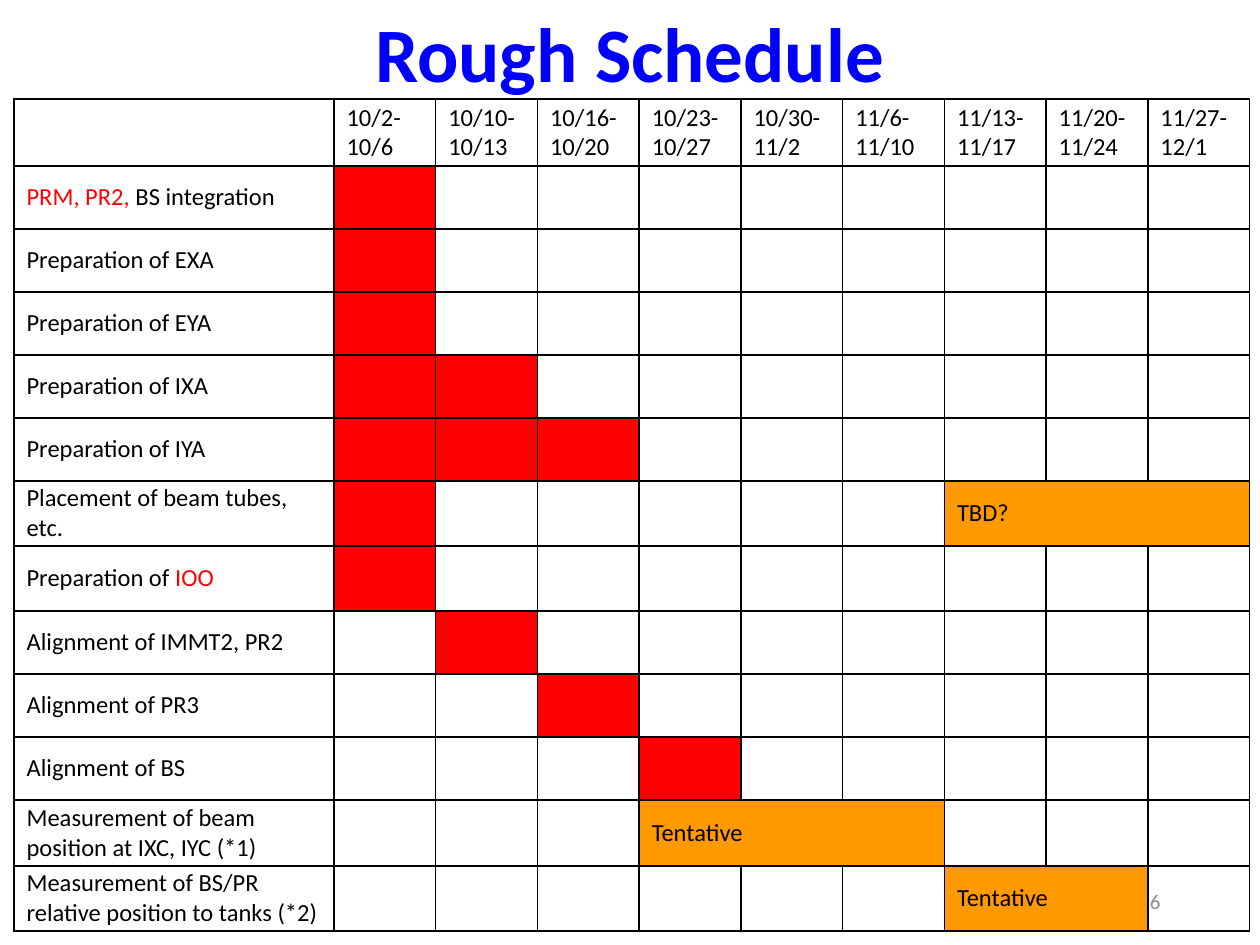
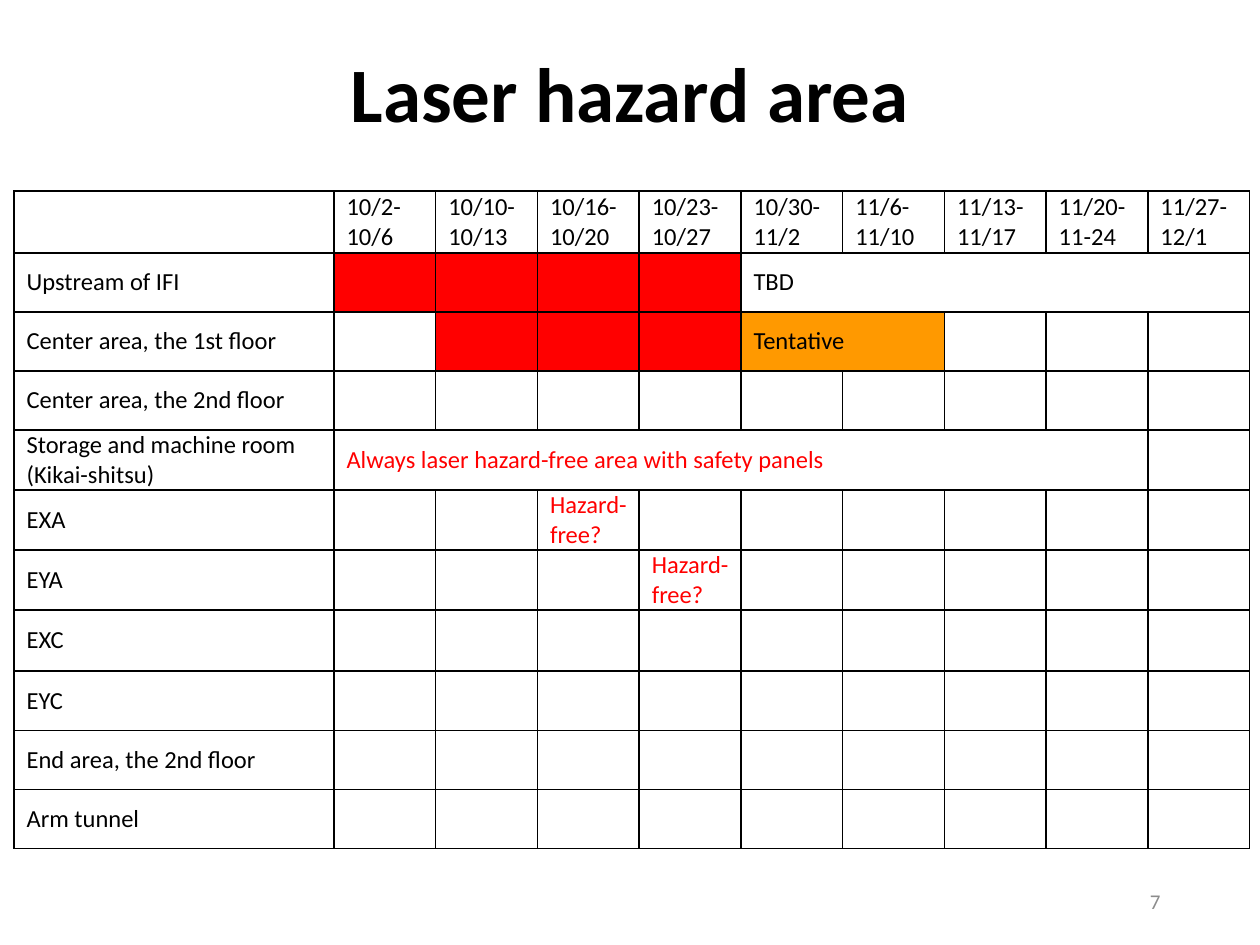
from dataclasses import dataclass

from lxml import etree
from pptx import Presentation
from pptx.dml.color import RGBColor
from pptx.enum.text import MSO_ANCHOR, PP_ALIGN
from pptx.oxml.ns import qn
from pptx.util import Emu, Pt

MIDDLE = MSO_ANCHOR.MIDDLE
LEFT, CENTER, RIGHT = PP_ALIGN.LEFT, PP_ALIGN.CENTER, PP_ALIGN.RIGHT
SCALE = 914400 / 126


@dataclass(frozen=True)
class Theme:
    font: str = "Calibri"
    black: str = "000000"
    blue: str = "0000FF"
    red: str = "FF0000"
    orange: str = "FF9900"
    gray: str = "8C8C8C"
    title: int = 44
    body: int = 14
    small: int = 12
    rule: int = 1


THEME = Theme()
RED, ORANGE = THEME.red, THEME.orange
WEEKS = ["10/2-10/6", "10/10-10/13", "10/16-10/20", "10/23-10/27", "10/30-11/2",
         "11/6-11/10", "11/13-11/17", "11/20-11/24", "11/27-12/1"]


def px(count):
    return Emu(round(count * SCALE))


def write(frame, text, size=THEME.body, color=THEME.black, bold=False,
          align=LEFT, spacing=None):
    """Fill a frame with a string, or a list of (string, colour) runs."""
    parts = [(text, color)] if isinstance(text, str) else text
    frame.word_wrap = True
    para = frame.paragraphs[0]
    for words, tint in parts:
        for n, line in enumerate(words.split("\n")):
            if n:
                para = frame.add_paragraph()
            para.alignment = align
            para.line_spacing = spacing
            run = para.add_run()
            run.text = line
            font = run.font
            font.name, font.size, font.bold = THEME.font, Pt(size), bold
            font.color.rgb = RGBColor.from_string(tint)


def border(cell):
    props = cell._tc.get_or_add_tcPr()
    for n, side in enumerate(("lnL", "lnR", "lnT", "lnB")):
        line = etree.Element(qn(f"a:{side}"), w=str(Pt(THEME.rule)))
        fill = etree.SubElement(line, qn("a:solidFill"))
        etree.SubElement(fill, qn("a:srgbClr"), val=THEME.black)
        props.insert(n, line)


def paint(cell, color):
    cell.fill.solid()
    cell.fill.fore_color.rgb = RGBColor.from_string(color)


class Deck:
    def __init__(self):
        self.file = Presentation()
        self.file.slide_width, self.file.slide_height = px(1260), px(945)
        self.slide = None

    def start(self, title, height, number, color=THEME.black):
        """Add a slide with its title and page number."""
        self.slide = self.file.slides.add_slide(self.file.slide_layouts[6])
        self.text((87, 0, 1086, height), title, size=THEME.title,
                  color=color, bold=True, align=CENTER, spacing=0.9)
        self.text((890, 876, 283, 50), str(number), size=THEME.small,
                  color=THEME.gray, align=RIGHT)

    def text(self, area, text, **style):
        frame = self.slide.shapes.add_textbox(*map(px, area)).text_frame
        frame.vertical_anchor = MIDDLE
        write(frame, text, **style)

    def plan(self, top, heights, weeks, tasks):
        """Draw a week grid; each task is a label and its bars."""
        width, label = 1236, 320
        grid = self.slide.shapes.add_table(
            len(heights), len(weeks) + 1, px(14), px(top), px(width),
            px(sum(heights))).table
        grid.first_row = grid.horz_banding = False
        for n, col in enumerate(grid.columns):
            col.width = px((width - label) / len(weeks) if n else label)
        for row, height in zip(grid.rows, heights):
            row.height = px(height)
        for cell in grid.iter_cells():
            cell.margin_top = cell.margin_bottom = 0
            cell.vertical_anchor = MIDDLE
            cell.fill.background()
            border(cell)
        for n, week in enumerate(weeks, 1):
            write(grid.cell(0, n).text_frame, week)
        for n, (name, *bars) in enumerate(tasks, 1):
            write(grid.cell(n, 0).text_frame, name)
            for bar in bars:
                self.bar(grid, n, *bar)

    def bar(self, grid, row, first, last, fill=RED, note=None, color=THEME.black):
        """Fill a run of weeks, joined into one cell if it has a note."""
        cells = [grid.cell(row, n) for n in range(first, last + 1)]
        if fill:
            for cell in cells:
                paint(cell, fill)
        if note:
            if last > first:
                cells[0].merge(cells[-1])
            write(cells[0].text_frame, note, color=color)


def main():
    deck = Deck()

    deck.start("Rough Schedule", 115, 6, THEME.blue)
    deck.plan(99, [67] + [63] * 5 + [65] * 2 + [63] * 3 + [66, 65], WEEKS, [
        ([("PRM, PR2,", RED), (" BS integration", THEME.black)], (1, 1)),
        ("Preparation of EXA", (1, 1)),
        ("Preparation of EYA", (1, 1)),
        ("Preparation of IXA", (1, 2)),
        ("Preparation of IYA", (1, 3)),
        ("Placement of beam tubes, etc.", (1, 1), (7, 9, ORANGE, "TBD?")),
        ([("Preparation of ", THEME.black), ("IOO", RED)], (1, 1)),
        ("Alignment of IMMT2, PR2", (2, 2)),
        ("Alignment of PR3", (3, 3)),
        ("Alignment of BS", (4, 4)),
        ("Measurement of beam position at IXC, IYC (*1)",
         (4, 6, ORANGE, "Tentative")),
        ("Measurement of BS/PR relative position to tanks (*2)",
         (7, 8, ORANGE, "Tentative")),
    ])

    deck.start("Laser hazard area", 195, 7)
    weeks = [*WEEKS[:7], "11/20-11-24", WEEKS[8]]
    deck.plan(191, [62] + [59] * 3 + [60] * 3 + [61, 60] + [59] * 2, weeks, [
        ("Upstream of IFI", (1, 4), (5, 9, None, "TBD")),
        ("Center area, the 1st floor", (2, 4), (5, 6, ORANGE, "Tentative")),
        ("Center area, the 2nd floor",),
        ("Storage and machine room\n(Kikai-shitsu)",
         (1, 8, None, "Always laser hazard-free area with safety panels", RED)),
        ("EXA", (3, 3, None, "Hazard-free?", RED)),
        ("EYA", (4, 4, None, "Hazard-free?", RED)),
        ("EXC",),
        ("EYC",),
        ("End area, the 2nd floor",),
        ("Arm tunnel",),
    ])

    deck.file.save("out.pptx")


if __name__ == "__main__":
    main()
